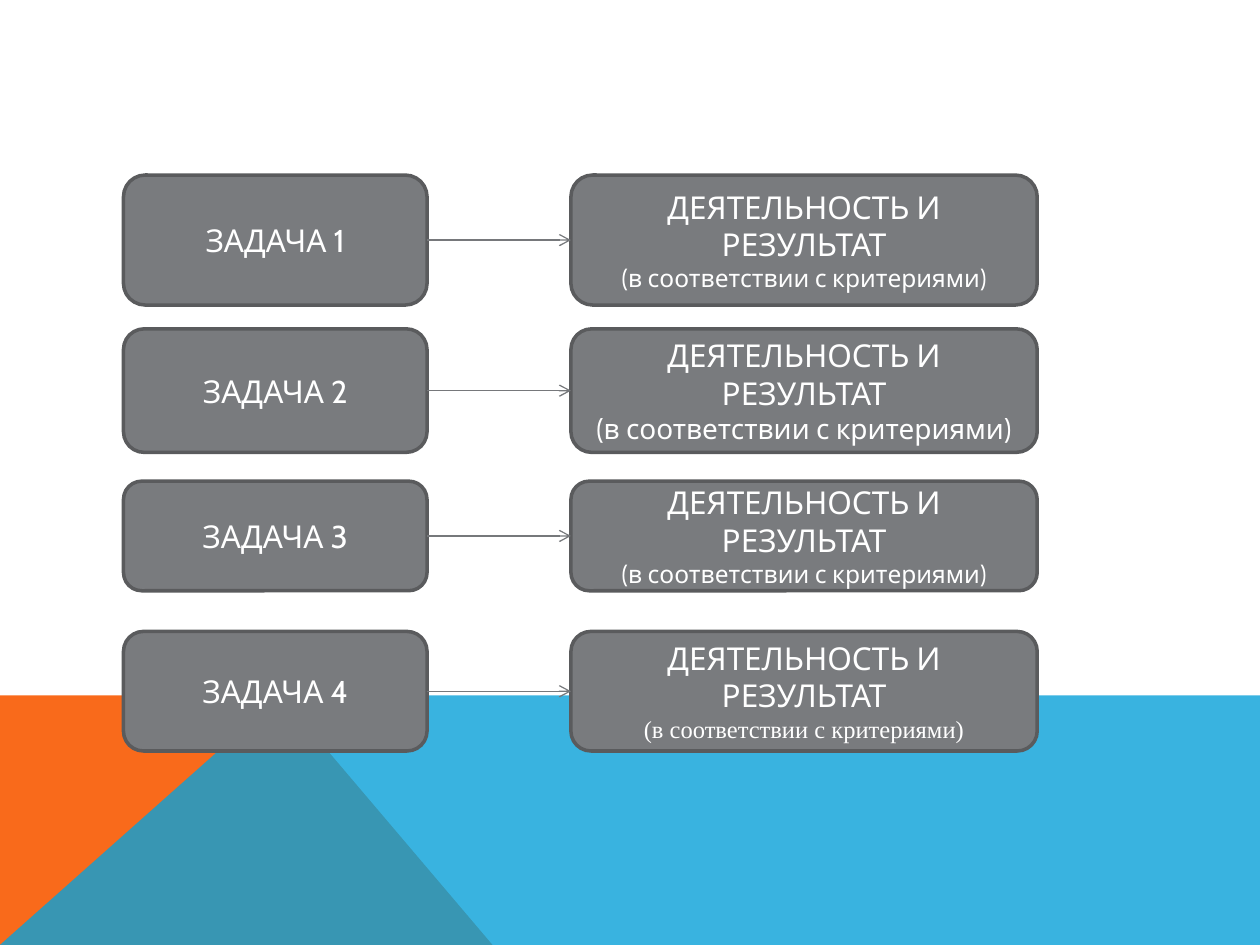
import lxml.etree
import pptx
import pptx.dml.color
import pptx.enum.shapes
import pptx.enum.text
import pptx.oxml.ns
import pptx.util
from pptx.util import Cm

COLORS = {
    "orange": "F96A1B",
    "blue": "08A1D9",
    "box": "797B7E",
    "border": "5A5B5D",
    "arrow": "76787B",
    "text": "FFFFFF",
}
FONT = "Cabin"
RIGHT_SIDE, LEFT_SIDE = 3, 1

SLIDE_WIDTH, SLIDE_HEIGHT = 25.4, 19.05
BAND_TOP, PEAK_X, WEDGE_RIGHT = 14.02, 5.66, 9.93

TASK_LEFT, TASK_WIDTH = 2.49, 6.12
RESULT_LEFT, RESULT_WIDTH = 11.51, 9.4
RESULT = "ДЕЯТЕЛЬНОСТЬ И РЕЗУЛЬТАТ"
CRITERIA = "(в соответствии с критериями)"

# top, height, size and font of the criteria line
ROWS = [
    (3.53, 2.62, 14, FONT),
    (6.63, 2.49, 16, FONT),
    (9.7, 2.21, 14, FONT),
    (12.73, 2.41, 14, "Times New Roman"),
]


def rgb(name):
    return pptx.dml.color.RGBColor.from_string(COLORS[name])


def add_xml(parent, tag, **attributes):
    return lxml.etree.SubElement(parent, pptx.oxml.ns.qn(tag), attributes)


class SlideBuilder:
    """Holds the style and the slide being filled."""

    def __init__(self, slide):
        self.slide = slide
        self.frame_format = {
            "word_wrap": True,
            "vertical_anchor": pptx.enum.text.MSO_ANCHOR.MIDDLE,
        }

    def polygon(self, points, color, opacity=100):
        corners = [(Cm(x), Cm(y)) for x, y in points]
        builder = self.slide.shapes.build_freeform(*corners[0])
        builder.add_line_segments(corners[1:], close=True)
        shape = builder.convert_to_shape()
        shape.shadow.inherit = False
        shape.line.fill.background()
        shape.fill.solid()
        shape.fill.fore_color.rgb = rgb(color)
        if opacity < 100:
            color_element = shape.fill._xPr.find(".//" + pptx.oxml.ns.qn("a:srgbClr"))
            add_xml(color_element, "a:alpha", val=str(opacity * 1000))

    def box(self, left, top, width, height, lines):
        """Add a rounded box; each line is (text, size, font)."""
        shape = self.slide.shapes.add_shape(
            pptx.enum.shapes.MSO_SHAPE.ROUNDED_RECTANGLE,
            Cm(left), Cm(top), Cm(width), Cm(height))
        shape.shadow.inherit = False
        shape.fill.solid()
        shape.fill.fore_color.rgb = rgb("box")
        shape.line.color.rgb = rgb("border")
        shape.line.width = pptx.util.Pt(2)
        frame = shape.text_frame
        for name, value in self.frame_format.items():
            setattr(frame, name, value)
        frame.text = "\n".join(text for text, _, _ in lines)
        for paragraph, (_, size, font) in zip(frame.paragraphs, lines):
            paragraph.alignment = pptx.enum.text.PP_ALIGN.CENTER
            run_font = paragraph.runs[0].font
            for name, value in {"size": pptx.util.Pt(size), "name": font}.items():
                setattr(run_font, name, value)
            run_font.color.rgb = rgb("text")
        return shape

    def arrow(self, start, end):
        connector = self.slide.shapes.add_connector(
            pptx.enum.shapes.MSO_CONNECTOR.STRAIGHT, 0, 0, 0, 0)
        connector.begin_connect(start, RIGHT_SIDE)
        connector.end_connect(end, LEFT_SIDE)
        connector.line.color.rgb = rgb("arrow")
        connector.line.width = pptx.util.Pt(0.75)
        add_xml(connector.line._get_or_add_ln(), "a:tailEnd", type="arrow")
        add_xml(connector._element.spPr, "a:effectLst")


def main():
    presentation = pptx.Presentation()
    presentation.slide_width = Cm(SLIDE_WIDTH)
    presentation.slide_height = Cm(SLIDE_HEIGHT)
    blank_layout = presentation.slide_layouts[6]
    builder = SlideBuilder(presentation.slides.add_slide(blank_layout))

    bottom_left, peak = (0, SLIDE_HEIGHT), (PEAK_X, BAND_TOP)
    builder.polygon(
        [bottom_left, (0, BAND_TOP), peak, (WEDGE_RIGHT, SLIDE_HEIGHT)], "orange")
    builder.polygon(
        [bottom_left, peak, (SLIDE_WIDTH, BAND_TOP), (SLIDE_WIDTH, SLIDE_HEIGHT)],
        "blue", opacity=80)

    for number, (top, height, size, font) in enumerate(ROWS, start=1):
        task = builder.box(TASK_LEFT, top, TASK_WIDTH, height,
                           [(f"ЗАДАЧА {number}", 18, FONT)])
        result = builder.box(RESULT_LEFT, top, RESULT_WIDTH, height,
                             [(RESULT, 18, FONT), (CRITERIA, size, font)])
        builder.arrow(task, result)

    presentation.save("out.pptx")


if __name__ == "__main__":
    main()
